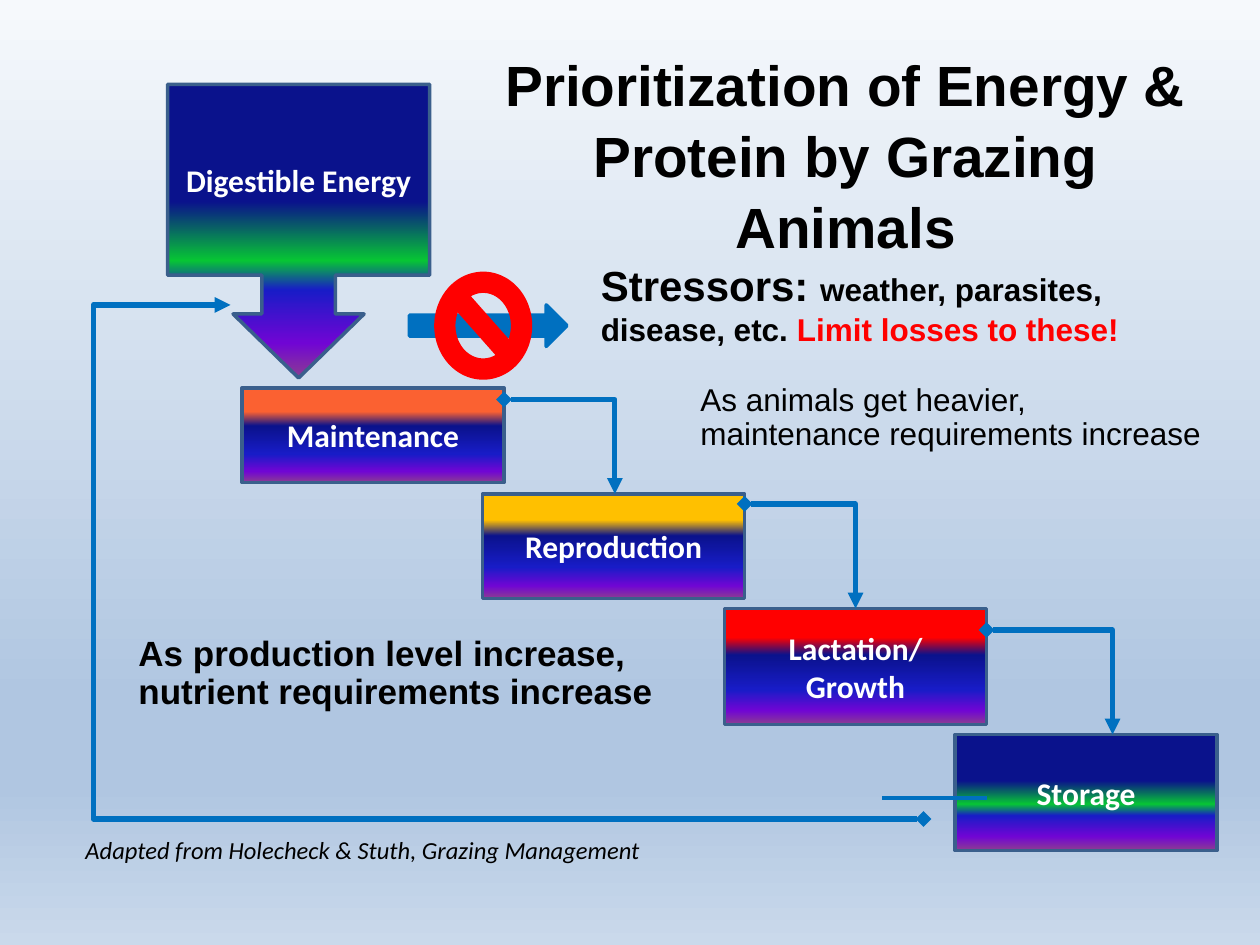
from lxml.etree import SubElement
from pptx import Presentation
from pptx.dml.color import RGBColor
from pptx.enum.dml import MSO_THEME_COLOR
from pptx.enum.shapes import MSO_CONNECTOR, MSO_SHAPE
from pptx.enum.text import MSO_ANCHOR, PP_ALIGN
from pptx.oxml.ns import qn
from pptx.util import Inches, Pt

THEME = {
    "title": 32.4, "stressors": 24, "note_large": 20, "body": 18, "source": 14,
    "heading_font": "Arial", "box_font": "Calibri",
    "black": "000000", "white": "FFFFFF", "red": "FF0000",
    "flow": "0070C0", "box_line": "3A5F8C",
    "background": [(0, "F6F9FC"), (74, "B0C6E1"), (83, "B0C6E1"), (100, "CAD9EB")],
}
BLUE_TO_PURPLE = [(70, "181CC7"), (88, "7005D4"), (100, "8C3D91")]
ENERGY = [(40, "0A128C"), (60, "07C534")] + BLUE_TO_PURPLE


def priority(color):
    return [(25, color), (40, "0A128C")] + BLUE_TO_PURPLE


BOX_WIDTH = 2.08
SOURCE_BOX = ("Digestible Energy", (1.33, 0.67, BOX_WIDTH, 2.33), ENERGY)
# label, left, top, height, gradient
STEPS = [
    ("Maintenance", 1.92, 3.08, 0.75, priority("FB6131")),
    ("Reproduction", 3.83, 3.92, 0.83, priority("FFC000")),
    ("Lactation/\vGrowth", 5.75, 4.83, 0.92, priority("FF0000")),
    ("Storage", 7.58, 5.83, 0.92, ENERGY),
]
# drop below the top of the box left, run to the right of its edge
STEP_LINKS = [(0.09, 0.88), (0.08, 0.88), (0.17, 1.0)]

TITLE = "Prioritization of Energy & Protein by Grazing Animals"
STRESSORS = [
    ("Stressors: ", "stressors", "black"),
    ("weather, parasites, disease, etc. ", "body", "black"),
    ("Limit losses to these!", "body", "red"),
]
# text, place, size, font, bold, italic, line spacing
NOTES = [
    ("Adapted from Holecheck & Stuth, Grazing Management",
     (0.58, 6.58, 5.25, 0.34), "source", "box_font", False, True, 1.0),
    ("As animals get heavier, maintenance requirements increase",
     (5.46, 3, 4.25, 0.65), "body", "heading_font", False, False, 0.9),
    ("As production level increase, nutrient requirements increase",
     (1, 5, 4.42, 0.71), "note_large", "heading_font", True, False, 0.9),
]


def rgb(name):
    return RGBColor.from_string(THEME.get(name, name))


def set_gradient(fill, element, stops):
    """Fill from top to bottom with any number of (percent, colour) stops."""
    fill.gradient()
    fill.gradient_angle = 270
    stop_list = element.find(".//" + qn("a:gsLst"))
    for stop in list(stop_list):
        stop_list.remove(stop)
    for percent, color in stops:
        stop = SubElement(stop_list, qn("a:gs"), pos=str(percent * 1000))
        SubElement(stop, qn("a:srgbClr"), val=color)


def style(target, size, font, color, bold=False, italic=False):
    target.font.size = Pt(THEME[size])
    target.font.name = THEME[font]
    target.font.color.rgb = rgb(color)
    target.font.bold = bold
    target.font.italic = italic


def add_shape(slide, preset, place, line):
    shape = slide.shapes.add_shape(preset, *map(Inches, place))
    shape.shadow.inherit = False
    shape.line.color.rgb = rgb(line)
    shape.line.width = Pt(2)
    return shape


def add_box(slide, preset, label, place, stops):
    box = add_shape(slide, preset, place, "box_line")
    set_gradient(box.fill, box.element, stops)
    frame = box.text_frame
    frame.word_wrap = True
    frame.vertical_anchor = MSO_ANCHOR.MIDDLE
    frame.text = label
    frame.paragraphs[0].alignment = PP_ALIGN.CENTER
    style(frame.paragraphs[0], "body", "box_font", "white", bold=True)
    return box


def add_solid(slide, preset, place, color):
    shape = add_shape(slide, preset, place, color)
    shape.fill.solid()
    shape.fill.fore_color.rgb = rgb(color)


def add_text(slide, place):
    frame = slide.shapes.add_textbox(*map(Inches, place)).text_frame
    frame.word_wrap = True
    return frame


def add_link(slide, kind, start, end, width, preset=None, bend=None, ends=()):
    """Draw a connector; ends holds the marks at its start and its end."""
    link = slide.shapes.add_connector(kind, *map(Inches, start + end))
    link.line.color.rgb = rgb("flow")
    link.line.width = Pt(width)
    properties = link.element.spPr
    geometry = properties.find(qn("a:prstGeom"))
    if preset:
        geometry.set("prst", preset)
    if bend is not None:
        SubElement(geometry.find(qn("a:avLst")), qn("a:gd"),
                   name="adj1", fmla=f"val {round(bend * 100000)}")
    for tag, mark in zip(("a:headEnd", "a:tailEnd"), ends):
        SubElement(properties.find(qn("a:ln")), qn(tag), type=mark)
    SubElement(properties, qn("a:effectLst"))


def main():
    deck = Presentation()
    deck.slide_width, deck.slide_height = Inches(10), Inches(7.5)
    slide = deck.slides.add_slide(deck.slide_layouts[6])
    set_gradient(slide.background.fill, slide.element, THEME["background"])

    title = add_text(slide, (3.75, 0.42, 5.92, 1.6))
    title.vertical_anchor = MSO_ANCHOR.MIDDLE
    title.text = TITLE
    title.paragraphs[0].alignment = PP_ALIGN.CENTER
    title.paragraphs[0].line_spacing = 1.04
    style(title.paragraphs[0], "title", "heading_font", "black", bold=True)

    energy = add_box(slide, MSO_SHAPE.DOWN_ARROW_CALLOUT, *SOURCE_BOX)
    for index, value in enumerate((0.281, 0.25, 0.244, 0.65)):
        energy.adjustments[index] = value
    for label, left, top, height, stops in STEPS:
        add_box(slide, MSO_SHAPE.FLOWCHART_PROCESS, label,
                (left, top, BOX_WIDTH, height), stops)

    add_link(slide, MSO_CONNECTOR.STRAIGHT, (7.83, 6.33), (7, 6.33), 2.25)
    add_link(slide, MSO_CONNECTOR.ELBOW, (1.83, 2.42), (7.33, 6.5), 3,
             bend=-0.198, ends=("triangle", "diamond"))
    for step, following, (drop, run) in zip(STEPS, STEPS[1:], STEP_LINKS):
        right = step[1] + BOX_WIDTH
        add_link(slide, MSO_CONNECTOR.ELBOW, (right, step[2] + drop),
                 (right + run, following[2]), 3, preset="bentConnector2",
                 ends=("diamond", "triangle"))

    add_solid(slide, MSO_SHAPE.RIGHT_ARROW, (3.25, 2.42, 1.25, 0.33), "flow")
    stressors = add_text(slide, (4.67, 2.01, 5, 0.81)).paragraphs[0]
    for words, size, color in STRESSORS:
        run = stressors.add_run()
        run.text = words
        style(run, size, "heading_font", color, bold=True)
    add_solid(slide, MSO_SHAPE.NO_SYMBOL, (3.46, 2.17, 0.75, 0.83), "red")

    for words, place, size, font, bold, italic, spacing in NOTES:
        note = add_text(slide, place).paragraphs[0]
        note.text = words
        note.line_spacing = spacing
        style(note, size, font, "black", bold, italic)

    deck.save("out.pptx")


if __name__ == "__main__":
    main()
